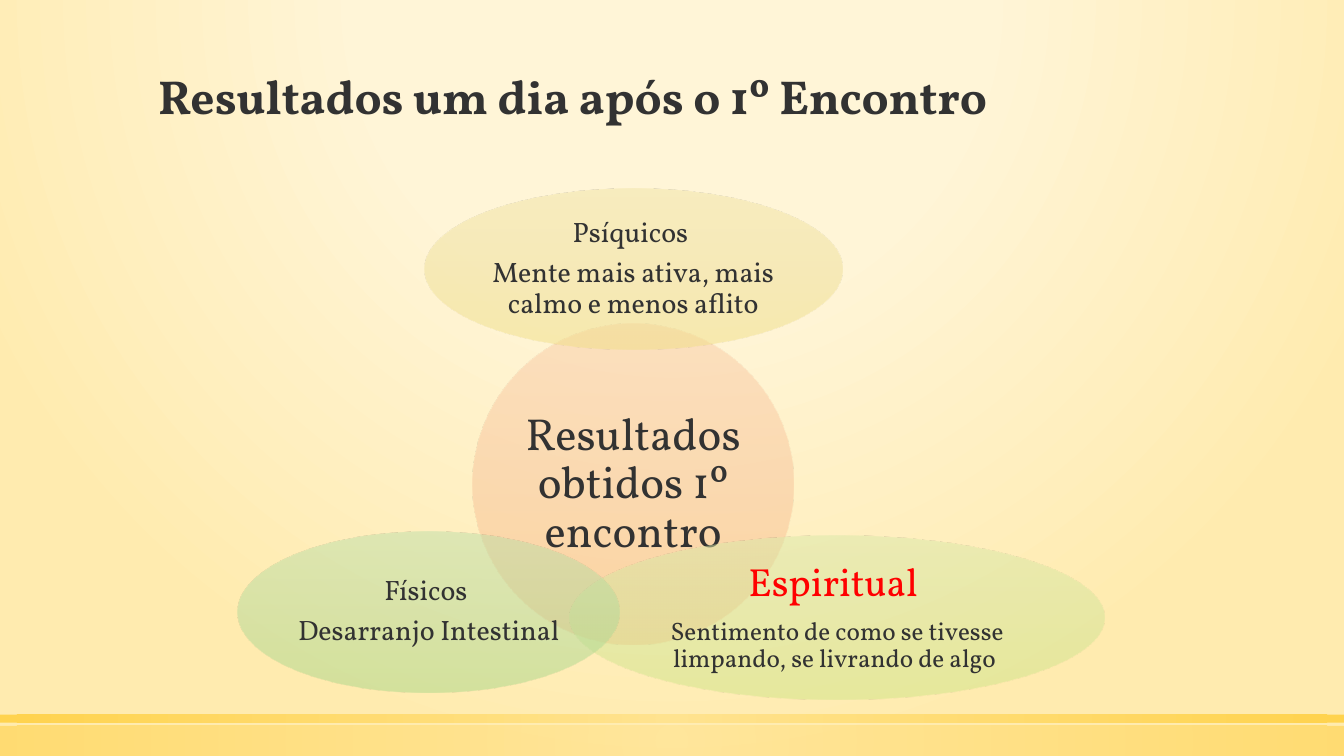
from pptx import Presentation
from pptx.dml.color import RGBColor
from pptx.enum.shapes import MSO_SHAPE
from pptx.enum.text import MSO_ANCHOR, MSO_AUTO_SIZE, PP_ALIGN
from pptx.oxml import parse_xml
from pptx.oxml.ns import nsdecls
from pptx.util import Cm, Pt

WIDTH, HEIGHT = 33.87, 19.05
INK, RED = "323232", "FF0000"
DOWNWARD = '<a:lin ang="5400000" scaled="0"/>'


def color(hex_code):
    return RGBColor.from_string(hex_code)


def radial(left, top, right, bottom):
    """Circular gradient focus, edges in percent."""
    return (f'<a:path path="circle"><a:fillToRect l="{left * 1000}" t="{top * 1000}" '
            f'r="{right * 1000}" b="{bottom * 1000}"/></a:path>')


class Deck:
    font = "Vollkorn"
    line_spacing = 0.9
    paragraph_gap = 0.35

    def __init__(self):
        self.presentation = Presentation()
        self.presentation.slide_width = Cm(WIDTH)
        self.presentation.slide_height = Cm(HEIGHT)
        layout = self.presentation.slide_layouts.get_by_name("Title Only")
        self.slide = self.presentation.slides.add_slide(layout)

    def gradient(self, owner, fill, stops, direction):
        """Fill with stops of (position %, hex colour, opacity %)."""
        fill.gradient()
        stop_xml = "".join(
            f'<a:gs pos="{position * 1000}"><a:srgbClr val="{color(hex_code)}">'
            f'<a:alpha val="{opacity * 1000}"/></a:srgbClr></a:gs>'
            for position, hex_code, opacity in stops)
        default = owner.element.xpath(".//a:gradFill")[0]
        default.getparent().replace(default, parse_xml(
            f'<a:gradFill {nsdecls("a")} rotWithShape="1"><a:gsLst>{stop_xml}</a:gsLst>'
            f'{direction}</a:gradFill>'))

    def background(self, stops, direction):
        self.gradient(self.slide, self.slide.background.fill, stops, direction)

    def shape(self, kind, box, stops, direction):
        shape = self.slide.shapes.add_shape(kind, *map(Cm, box))
        shape.shadow.inherit = False
        shape.line.fill.background()
        self.gradient(shape, shape.fill, stops, direction)
        return shape

    def set_paragraph(self, paragraph, text, size, hex_code, align, bold=False):
        paragraph.text = text
        paragraph.alignment = align
        paragraph.line_spacing = self.line_spacing
        for run in paragraph.runs:
            run.font.name = self.font
            run.font.size = Pt(size)
            run.font.bold = bold
            run.font.color.rgb = color(hex_code)

    def title(self, text, box):
        title = self.slide.shapes.title
        title.left, title.top, title.width, title.height = map(Cm, box)
        frame = title.text_frame
        frame.auto_size = MSO_AUTO_SIZE.NONE
        frame.vertical_anchor = MSO_ANCHOR.BOTTOM
        self.set_paragraph(frame.paragraphs[0], text, 34, INK, PP_ALIGN.LEFT, bold=True)

    def band(self, top, height, opacity):
        stops = [(0, "FFE186", opacity), (100, "FFCD36", opacity)]
        self.shape(MSO_SHAPE.RECTANGLE, (0, top, WIDTH, height), stops, radial(50, 50, 50, 50))

    def bubble(self, box, tints, lines, inset):
        stops = [(position, tint, 50) for position, tint in zip((0, 50, 100), tints)]
        frame = self.shape(MSO_SHAPE.OVAL, box, stops, DOWNWARD).text_frame
        frame.word_wrap = True
        frame.vertical_anchor = MSO_ANCHOR.MIDDLE
        frame.margin_left = frame.margin_right = Cm(inset)
        frame.margin_top = frame.margin_bottom = Cm(inset)
        frame.text = "\n".join(text for text, _, _ in lines)
        for paragraph, (text, size, hex_code) in zip(frame.paragraphs, lines):
            self.set_paragraph(paragraph, text, size, hex_code, PP_ALIGN.CENTER)
            paragraph.space_after = Pt(round(size * self.paragraph_gap, 1))


def main():
    deck = Deck()

    # Background and bottom bands
    deck.background([(0, "FFF5D7", 59), (40, "FFF5D7", 66), (100, "FFEBAF", 100)],
                    radial(50, -80, 50, 180))
    deck.band(18.29, 0.76, 50)
    deck.band(18.01, 0.2, 80)

    # Title
    deck.title("Resultados um dia após o 1º Encontro", (3.73, 1.3, 26.42, 1.96))

    # Central result and the three areas around it
    deck.bubble((11.91, 8.15, 8.1, 8.1), ("FACDA9", "F8C39A", "FBBB87"),
                [("Resultados obtidos 1º encontro", 32, INK)], 0.1)
    deck.bubble((10.69, 4.75, 10.54, 4.06), ("F2E5A8", "EFE09A", "F1DF87"),
                [("Psíquicos ", 20, INK),
                 ("Mente mais ativa, mais calmo e menos aflito", 20, INK)], 0.08)
    deck.bubble((14.35, 13.49, 13.49, 4.14), ("DAE9A8", "D3E59A", "CFE587"),
                [("Espiritual ", 28, RED),
                 ("Sentimento de como se tivesse limpando, se livrando de algo ", 18, INK)], 0.1)
    deck.bubble((5.99, 13.39, 9.63, 4.06), ("BFE0A9", "B4DA9B", "A9D889"),
                [("Físicos ", 20, INK), ("Desarranjo Intestinal", 20, INK)], 0.08)

    deck.presentation.save("out.pptx")


if __name__ == "__main__":
    main()
